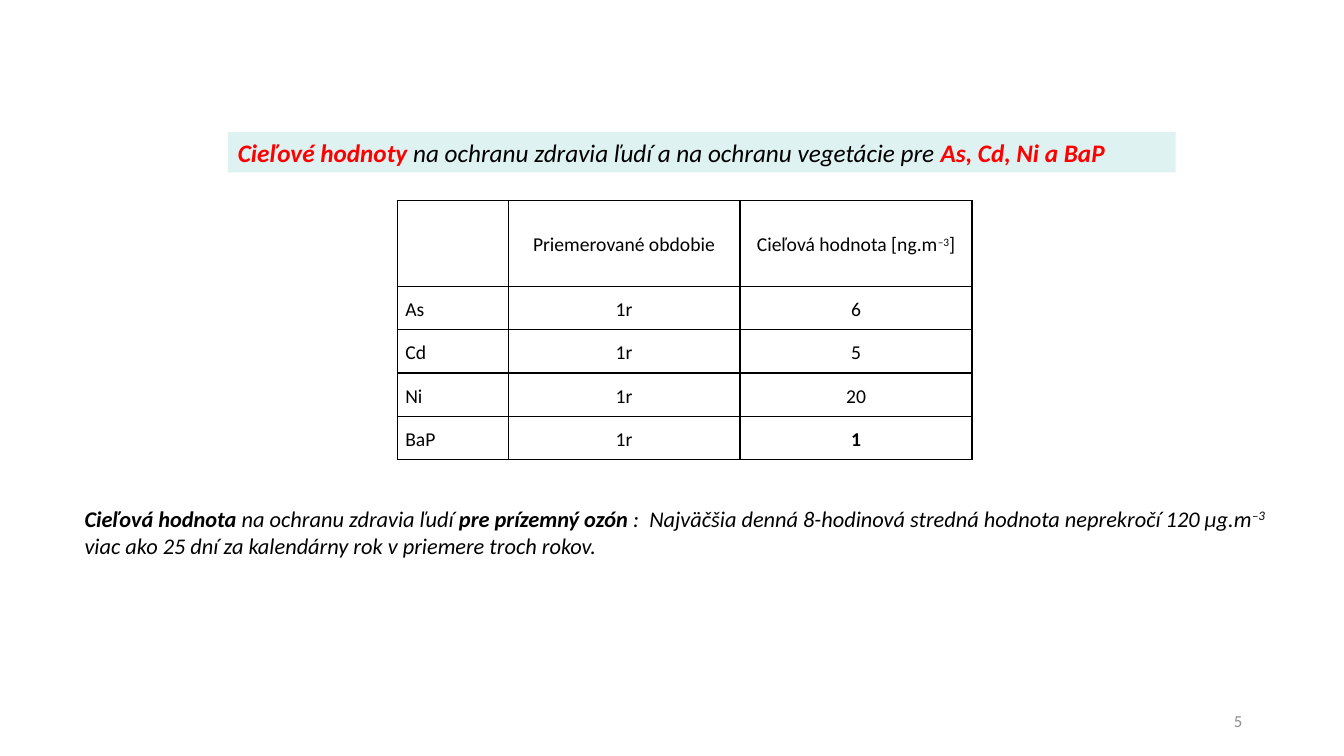
from dataclasses import dataclass

from lxml.etree import SubElement
from pptx import Presentation
from pptx.dml.color import RGBColor
from pptx.enum.text import MSO_ANCHOR as Anchor, MSO_AUTO_SIZE as AutoSize, PP_ALIGN as Align
from pptx.oxml.ns import qn
from pptx.util import Inches, Pt


@dataclass(frozen=True)
class Theme:
    font: str = "Calibri"
    ink: str = "000000"
    accent: str = "FF0000"
    muted: str = "8C8C8C"
    band: str = "DEF2F1"
    paper: str = "FFFFFF"
    heading: int = 18
    note: int = 16
    cell: int = 14
    number: int = 12
    border: int = 1


THEME = Theme()

# Content: each line is a list of (text, style) spans
HEADING = [[
    ("Cieľové hodnoty ", "key"),
    ("na ochranu zdravia ľudí a na ochranu vegetácie pre ", ""),
    ("As, Cd, Ni a BaP", "key"),
]]
TARGETS = [
    ["", "Priemerované obdobie", [("Cieľová hodnota [ng.m", ""), ("–3", "super"), ("]", "")]],
    ["As", "1r", "6"],
    ["Cd", "1r", "5"],
    ["Ni", "1r", "20"],
    ["BaP", "1r", [("1", "bold")]],
]
OZONE = [[
    ("Cieľová hodnota ", "bold"),
    ("na ochranu zdravia ľudí", ""),
    (" pre prízemný ozón ", "bold"),
    (":  Najväčšia denná 8-hodinová stredná hodnota neprekročí 120 µg.m", ""),
    ("–", "super upright"),
    ("3 ", "super"),
], [
    ("viac ako 25 dní za kalendárny rok v priemere troch rokov.", ""),
]]
PAGE_NUMBER = [[("5", "")]]

# Grid
SLIDE = (13.33, 7.5)
HEADING_AREA = (2.26, 1.31, 9.4, 0.4)
TABLE_CORNER = (3.94, 1.99)
OZONE_AREA = (0.74, 4.96, 12.13, 0.64)
NUMBER_AREA = (9.42, 6.95, 3, 0.4)
COLUMNS = (1.1, 2.3, 2.3)
ROW = 0.43
ROWS = [2 * ROW - 0.01] + [ROW] * (len(TARGETS) - 1)


def color(value):
    return RGBColor.from_string(value)


def inches(area):
    return [Inches(length) for length in area]


def write(frame, lines, size, ink=THEME.ink, italic=False, align=Align.LEFT,
          anchor=Anchor.MIDDLE, spacing=None):
    """Write the lines as one paragraph, parted by line breaks."""
    frame.word_wrap = True
    frame.vertical_anchor = anchor
    para = frame.paragraphs[0]
    para.alignment = align
    para.line_spacing = spacing
    for index, line in enumerate(lines):
        if index:
            para.add_line_break()
        for text, style in line:
            span = para.add_run()
            span.text = text
            font = span.font
            font.name, font.size = THEME.font, Pt(size)
            font.bold = "bold" in style or "key" in style
            font.italic = italic and "upright" not in style
            font.color.rgb = color(THEME.accent if "key" in style else ink)
            if "super" in style:
                font._element.set("baseline", "30000")


def add_borders(cell):
    properties = cell._tc.get_or_add_tcPr()
    for index, side in enumerate(("lnL", "lnR", "lnT", "lnB")):
        line = properties.makeelement(qn(f"a:{side}"), {"w": str(Pt(THEME.border))})
        fill = SubElement(line, qn("a:solidFill"))
        SubElement(fill, qn("a:srgbClr"), val=THEME.ink)
        properties.insert(index, line)


def add_text(page, area, lines, **style):
    box = page.shapes.add_textbox(*inches(area))
    write(box.text_frame, lines, **style)


def add_heading(page):
    title = page.shapes.title
    title.left, title.top, title.width, title.height = inches(HEADING_AREA)
    title.fill.solid()
    title.fill.fore_color.rgb = color(THEME.band)
    title.text_frame.auto_size = AutoSize.NONE
    write(title.text_frame, HEADING, THEME.heading, italic=True)


def add_targets(page):
    table = page.shapes.add_table(
        len(ROWS), len(COLUMNS), *inches(TABLE_CORNER + (sum(COLUMNS), sum(ROWS)))).table
    for column, width in zip(table.columns, COLUMNS):
        column.width = Inches(width)
    for row, height, values in zip(table.rows, ROWS, TARGETS):
        row.height = Inches(height)
        for index, (cell, value) in enumerate(zip(row.cells, values)):
            cell.fill.solid()
            cell.fill.fore_color.rgb = color(THEME.paper)
            cell.margin_left = Inches(0 if index else 0.08)
            cell.margin_right = cell.margin_top = cell.margin_bottom = 0
            cell.vertical_anchor = Anchor.MIDDLE
            add_borders(cell)
            if value:
                spans = [(value, "")] if isinstance(value, str) else value
                write(cell.text_frame, [spans], THEME.cell, spacing=1.15,
                      align=Align.CENTER if index else Align.LEFT)


def main():
    deck = Presentation()
    deck.slide_width, deck.slide_height = inches(SLIDE)
    page = deck.slides.add_slide(deck.slide_layouts.get_by_name("Title Only"))
    add_heading(page)
    add_targets(page)
    add_text(page, OZONE_AREA, OZONE, size=THEME.note, italic=True, anchor=Anchor.TOP)
    add_text(page, NUMBER_AREA, PAGE_NUMBER, size=THEME.number, ink=THEME.muted,
             align=Align.RIGHT)
    deck.save("out.pptx")


if __name__ == "__main__":
    main()
